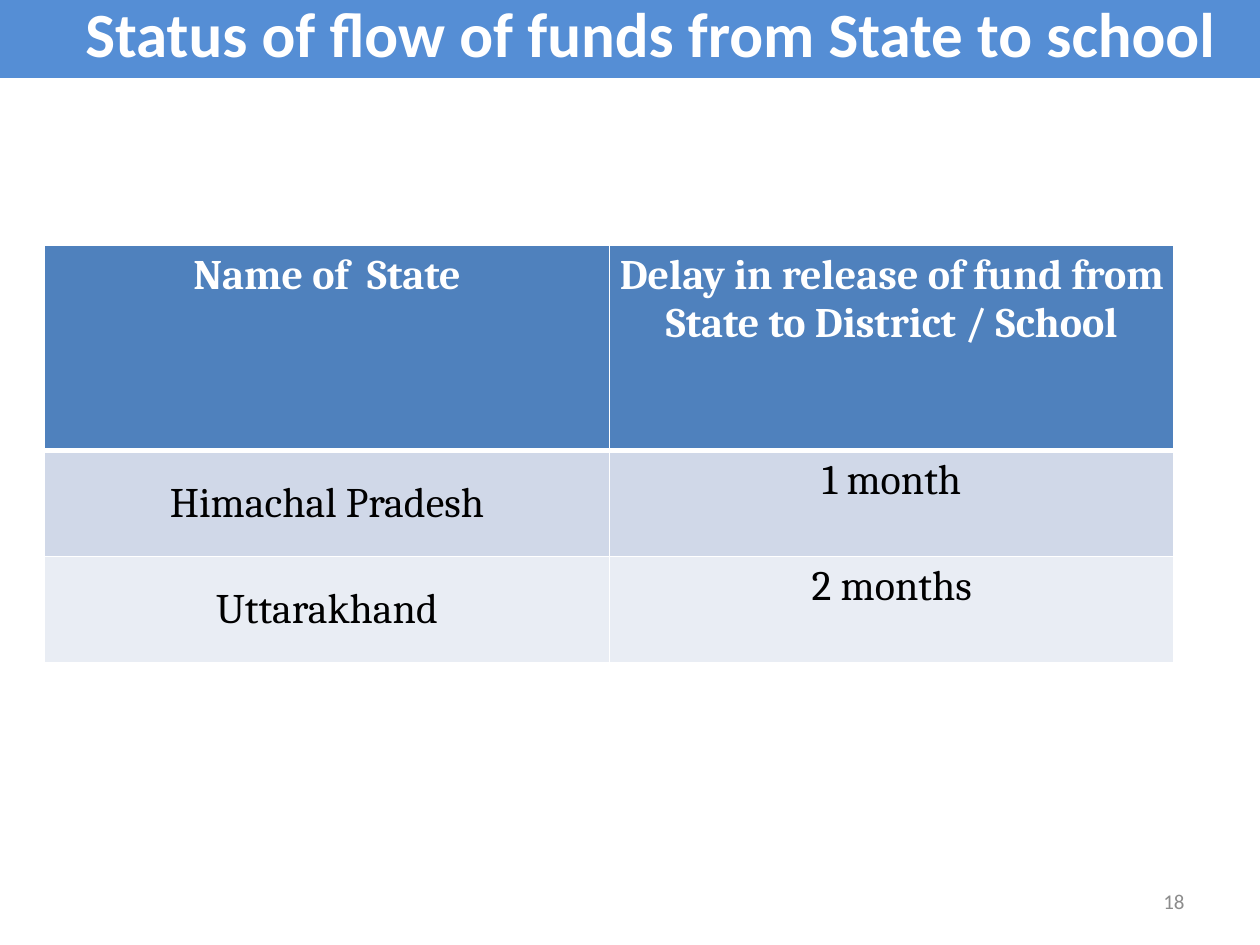
"""Build the slide on the flow of funds from State to school."""
from lxml.etree import SubElement as Sub
from pptx import Presentation
from pptx.dml.color import RGBColor
from pptx.enum.shapes import MSO_SHAPE as Shape
from pptx.enum.text import MSO_ANCHOR as Anchor, PP_ALIGN as Align
from pptx.oxml.ns import qn
from pptx.util import Pt

TITLE = "Status of flow of funds from State to school"
PAGE = "18"
ROWS = [
    ("Name of  State", "Delay in release of fund from\nState to District / School"),
    ("Himachal Pradesh", "1 month"),
    ("Uttarakhand", "2 months"),
]
FILLS = ["4F81BD", "D0D8E8", "E9EDF4"]
HIGHS = [117.5, 60.5, 60.5]
WIDE = 322.7
WIDE_PAD = (5, 3.6, 5, 3.6)
SLIM_PAD = (0.7, 0.7, 0.7, 0)


def paint(item, color):
    item.fill.solid()
    item.fill.fore_color.rgb = RGBColor.from_string(color)


def write(frame, text, size=24, font="Cambria", color="000000", bold=False,
          align=Align.CENTER, space=None):
    for i, line in enumerate(text.split("\n")):
        para = frame.add_paragraph() if i else frame.paragraphs[0]
        para.alignment = align
        if space:
            para.line_spacing = space
        run = para.add_run()
        run.text = line
        run.font.size = Pt(size)
        run.font.name = font
        run.font.bold = bold
        run.font.color.rgb = RGBColor.from_string(color)


def pad(item, sides):
    names = ("margin_left", "margin_top", "margin_right", "margin_bottom")
    for name, side in zip(names, sides):
        setattr(item, name, Pt(side))


def edge(cell, side, width):
    line = Sub(cell._tc.get_or_add_tcPr(), qn(f"a:ln{side}"), w=str(Pt(width)))
    Sub(Sub(line, qn("a:solidFill")), qn("a:srgbClr"), val="FFFFFF")


def add_grid(slide):
    grid = slide.shapes.add_table(
        len(ROWS), 2, Pt(25.5), Pt(140), Pt(2 * WIDE), Pt(sum(HIGHS))).table
    for col in grid.columns:
        col.width = Pt(WIDE)
    for r, row in enumerate(ROWS):
        grid.rows[r].height = Pt(HIGHS[r])
        for c, text in enumerate(row):
            cell = grid.cell(r, c)
            head, name = r == 0, r > 0 and c == 0
            for side in "LRTB":
                thick = side == "B" and head or side == "T" and r == 1
                edge(cell, side, 3 if thick else 1)
            paint(cell, FILLS[r])
            pad(cell, SLIM_PAD if name else WIDE_PAD)
            cell.vertical_anchor = Anchor.MIDDLE if name else Anchor.TOP
            write(cell.text_frame, text, bold=head,
                  color="FFFFFF" if head else "000000")


def add_title(slide):
    bar = slide.shapes.add_shape(Shape.RECTANGLE, 0, Pt(-2.3), Pt(720), Pt(46.8))
    bar.shadow.inherit = False
    paint(bar, "558ED5")
    bar.line.fill.background()
    frame = bar.text_frame
    frame.word_wrap = True
    frame.vertical_anchor = Anchor.MIDDLE
    pad(frame, (30.6, 3.6, 7.2, 3.6))
    write(frame, TITLE, size=36, font="Calibri", color="FFFFFF", bold=True, space=0.9)


def add_page(slide):
    frame = slide.shapes.add_textbox(Pt(516), Pt(500.5), Pt(168), Pt(28.8)).text_frame
    frame.word_wrap = True
    frame.vertical_anchor = Anchor.MIDDLE
    write(frame, PAGE, size=12, font="Calibri", color="8C8C8C", align=Align.RIGHT)


def main():
    deck = Presentation()
    deck.slide_width, deck.slide_height = Pt(720), Pt(540)
    slide = deck.slides.add_slide(deck.slide_layouts[6])
    add_grid(slide)
    add_title(slide)
    add_page(slide)
    deck.save("out.pptx")


if __name__ == "__main__":
    main()
